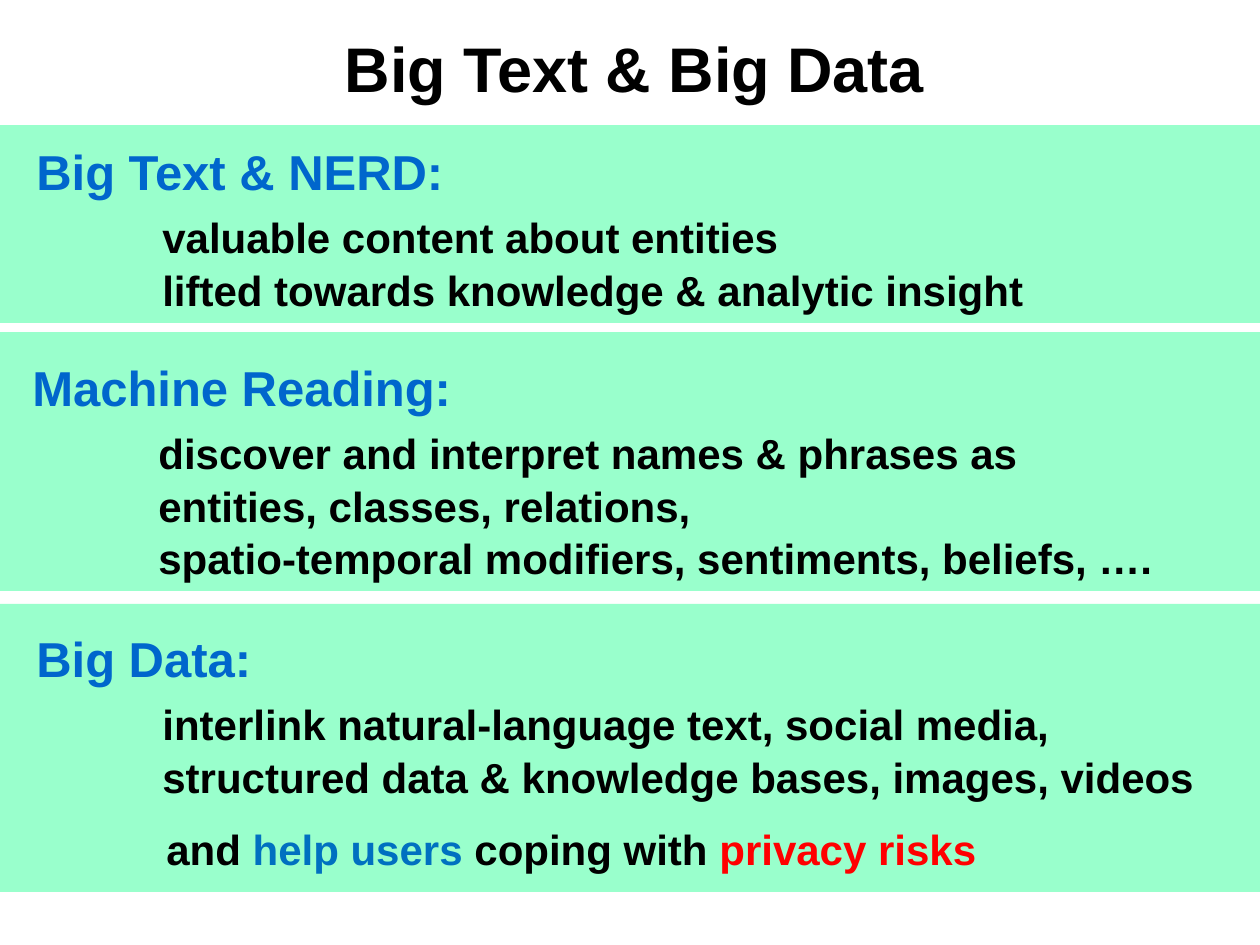
"""Build the slide on big text and big data."""
from pptx import Presentation
from pptx.dml.color import RGBColor as Rgb
from pptx.enum.shapes import MSO_SHAPE as Shape
from pptx.enum.text import MSO_ANCHOR as Anchor, PP_ALIGN as Align
from pptx.util import Pt

PX = 914400 // 126
THEME = dict(font="Arial", band="99FFCC", head="0066CC", ink="000000",
             help="0070C0", risk="FF0000", title=36, top=28, body=24)
TITLE = "Big Text & Big Data"
BANDS = [
    dict(band=(0, 125, 1260, 198), box=(24, 132, 1021, 183),
         head="Big Text & NERD:",
         lines=["valuable content about entities",
                "lifted towards knowledge & analytic insight"]),
    dict(band=(-4, 332, 1264, 259), box=(20, 348, 1155, 233),
         head="Machine Reading:",
         lines=["discover and interpret names & phrases as",
                "entities, classes, relations,",
                "spatio-temporal modifiers, sentiments, beliefs, …."]),
    dict(band=(0, 604, 1260, 288), box=(24, 619, 1208, 183),
         head="Big Data:",
         lines=["interlink natural-language text, social media,",
                "structured data & knowledge bases, images, videos"]),
]
CLOSE = [("and ", "ink"), ("help users ", "help"),
         ("coping with ", "ink"), ("privacy risks", "risk")]
CLOSE_BOX = (154, 815, 843, 63)
INDENT = 126


def scale(box):
    return [n * PX for n in box]


def write(para, text, size="body", color="ink"):
    run = para.add_run()
    run.text = text
    font = run.font
    font.name, font.size, font.bold = THEME["font"], Pt(THEME[size]), True
    font.color.rgb = Rgb.from_string(THEME[color])


def add_box(slide, box):
    frame = slide.shapes.add_textbox(*scale(box)).text_frame
    frame.word_wrap = False
    frame.paragraphs[0].line_spacing = 1.05
    return frame


def add_band(slide, box):
    band = slide.shapes.add_shape(Shape.RECTANGLE, *scale(box))
    band.shadow.inherit = False
    band.fill.solid()
    band.fill.fore_color.rgb = Rgb.from_string(THEME["band"])
    band.line.fill.background()


def add_part(slide, box, head, lines):
    frame = add_box(slide, box)
    write(frame.paragraphs[0], head, size="top", color="head")
    for i, line in enumerate(lines):
        para = frame.add_paragraph()
        para.line_spacing = 1.05
        para.space_before = Pt(0 if i else 5)
        para._p.get_or_add_pPr().set("marL", str(INDENT * PX))
        write(para, line)


def main():
    deck = Presentation()
    deck.slide_width, deck.slide_height = scale((1260, 945))
    slide = deck.slides.add_slide(deck.slide_layouts[5])
    title = slide.shapes.title
    title.left, title.top, title.width, title.height = scale((0, 0, 1269, 135))
    frame = title.text_frame
    frame.vertical_anchor = Anchor.MIDDLE
    frame.paragraphs[0].alignment = Align.CENTER
    write(frame.paragraphs[0], TITLE, size="title")
    for part in BANDS:
        add_band(slide, part["band"])
    for part in BANDS:
        add_part(slide, part["box"], part["head"], part["lines"])
    para = add_box(slide, CLOSE_BOX).paragraphs[0]
    for text, color in CLOSE:
        write(para, text, color=color)
    deck.save("out.pptx")


if __name__ == "__main__":
    main()
